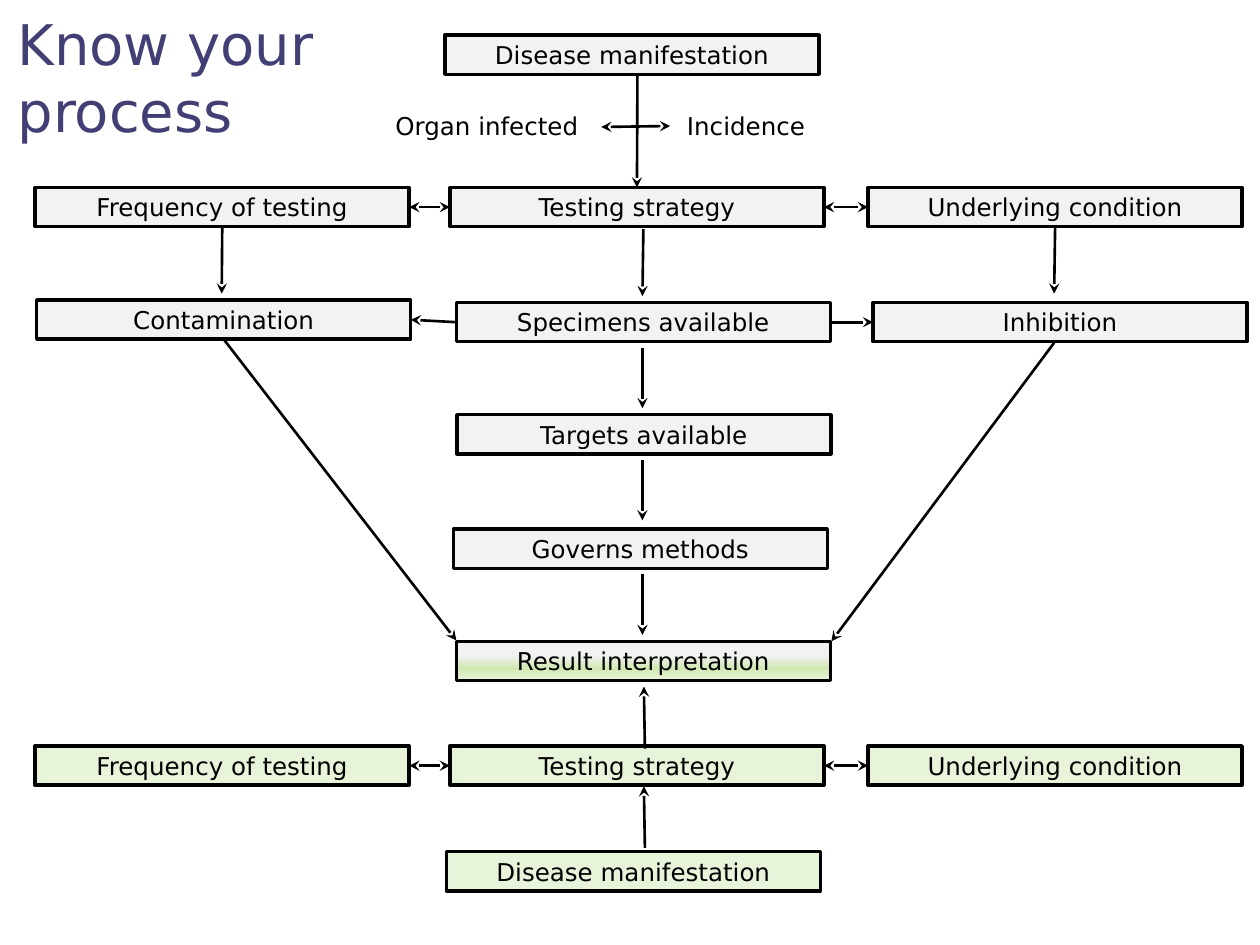
"""Build the "Know your process" flow chart slide."""
from copy import deepcopy

from lxml.etree import SubElement
from pptx import Presentation
from pptx.dml.color import RGBColor
from pptx.enum.shapes import MSO_CONNECTOR, MSO_SHAPE
from pptx.enum.text import MSO_ANCHOR, MSO_AUTO_SIZE, PP_ALIGN
from pptx.oxml.ns import qn
from pptx.util import Cm, Pt

FONT = "DejaVu Sans"
INDIGO = RGBColor(0x42, 0x3F, 0x74)
BLACK = RGBColor(0, 0, 0)
GREY = RGBColor(0xF2, 0xF2, 0xF2)
GREEN = RGBColor(0xE8, 0xF4, 0xD9)
LEAF = RGBColor(0xD1, 0xE8, 0xB2)
STEP_W, STEP_H = Cm(7.54), Cm(0.79)
TOP, LEFT, BOTTOM, RIGHT = range(4)


def write_label(shape, text):
    frame = shape.text_frame
    frame.text = text
    frame.word_wrap = True
    frame.vertical_anchor = MSO_ANCHOR.MIDDLE
    frame.margin_left = frame.margin_right = Cm(0.38)
    frame.margin_top = frame.margin_bottom = Cm(0.25)
    frame.paragraphs[0].alignment = PP_ALIGN.CENTER
    font = frame.paragraphs[0].runs[0].font
    font.name, font.size, font.color.rgb = FONT, Pt(14), BLACK


def add_arrow(start, end, heads):
    arrow = slide.shapes.add_connector(
        MSO_CONNECTOR.STRAIGHT, *[Cm(n) if isinstance(n, (int, float)) else 0 for n in (*start, *end)])
    if isinstance(start[0], str):
        arrow.begin_connect(steps[start[0]], start[1])
    if isinstance(end[0], str):
        arrow.end_connect(steps[end[0]], end[1])
    arrow.line.color.rgb = BLACK
    arrow.line.width = Pt(1.5)
    for head in heads:
        SubElement(arrow.line._get_or_add_ln(), qn(f"a:{head}"), type="stealth")
    SubElement(arrow._element.spPr, qn("a:effectLst"))


prs = Presentation()
prs.slide_width, prs.slide_height = Cm(25.4), Cm(19.05)
slide = prs.slides.add_slide(prs.slide_layouts[5])

title = slide.shapes.title
title.left, title.top, title.width, title.height = Cm(0.1), Cm(0.58), Cm(7.44), Cm(1.93)
title.text_frame.text = "Know your process"
title.text_frame.auto_size = MSO_AUTO_SIZE.NONE
title.text_frame.vertical_anchor = MSO_ANCHOR.MIDDLE
heading = title.text_frame.paragraphs[0]
heading.alignment = PP_ALIGN.LEFT
heading_font = heading.runs[0].font
heading_font.name, heading_font.size, heading_font.color.rgb = FONT, Pt(32), INDIGO

steps = {}
for key, text, left, top, colour in [
    ("disease", "Disease manifestation", 8.97, 0.71, GREY),
    ("frequency", "Frequency of testing", 0.71, 3.78, GREY),
    ("strategy", "Testing strategy", 9.07, 3.78, GREY),
    ("condition", "Underlying condition", 17.5, 3.78, GREY),
    ("contamination", "Contamination", 0.74, 6.05, GREY),
    ("specimens", "Specimens available", 9.2, 6.1, GREY),
    ("inhibition", "Inhibition", 17.6, 6.1, GREY),
    ("targets", "Targets available", 9.21, 8.36, GREY),
    ("methods", "Governs methods", 9.14, 10.67, GREY),
    ("result", "Result interpretation", 9.2, 12.93, GREY),
    ("green frequency", "Frequency of testing", 0.71, 15.04, GREEN),
    ("green strategy", "Testing strategy", 9.07, 15.04, GREEN),
    ("green condition", "Underlying condition", 17.5, 15.04, GREEN),
    ("green disease", "Disease manifestation", 9, 17.17, GREEN),
]:
    step = slide.shapes.add_shape(MSO_SHAPE.RECTANGLE, Cm(left), Cm(top), STEP_W, STEP_H)
    step.shadow.inherit = False
    step.fill.solid()
    step.fill.fore_color.rgb = colour
    step.line.color.rgb = BLACK
    step.line.width = Pt(2)
    write_label(step, text)
    steps[key] = step

blend = steps["result"].fill
blend.gradient()
blend.gradient_angle = 270
stop_list = steps["result"]._element.spPr.find(f".//{qn('a:gsLst')}")
for _ in range(2):
    stop_list.append(deepcopy(stop_list[0]))
blend_stops = [(0, GREY), (0.37, GREY), (0.69, LEAF), (1, GREEN)]
for stop, (position, colour) in zip(blend.gradient_stops, blend_stops):
    stop.position = position
    stop.color.rgb = colour

for text, left, width in [("Organ infected", 7.54, 4.55), ("Incidence", 13.06, 3.96)]:
    factor = slide.shapes.add_textbox(Cm(left), Cm(2.13), Cm(width), STEP_H)
    write_label(factor, text)

FORWARD, BACK, BOTH = ["tailEnd"], ["headEnd"], ["headEnd", "tailEnd"]
for start, end, heads in [
    ((12.85, 1.52), ("strategy", TOP), FORWARD),
    ((12.12, 2.56), (13.51, 2.54), BOTH),
    ((12.97, 4.62), (12.95, 5.97), FORWARD),
    (("contamination", RIGHT), ("specimens", LEFT), BACK),
    (("specimens", RIGHT), ("inhibition", LEFT), FORWARD),
    (("frequency", BOTTOM), (4.47, 5.92), FORWARD),
    (("condition", BOTTOM), (21.25, 5.92), FORWARD),
    (("contamination", BOTTOM), (9.2, 12.91), FORWARD),
    ((21.25, 6.91), (16.76, 12.93), FORWARD),
    ((12.98, 13.84), (13, 15.09), BACK),
    ((12.98, 15.85), (13, 17.09), BACK),
]:
    add_arrow(start, end, heads)

for top in (7.01, 9.27, 11.58):
    add_arrow((12.95, top), (12.95, top + 1.22), FORWARD)

for row in ("", "green "):
    add_arrow((row + "frequency", RIGHT), (row + "strategy", LEFT), BOTH)
    add_arrow((row + "strategy", RIGHT), (row + "condition", LEFT), BOTH)

prs.save("out.pptx")
